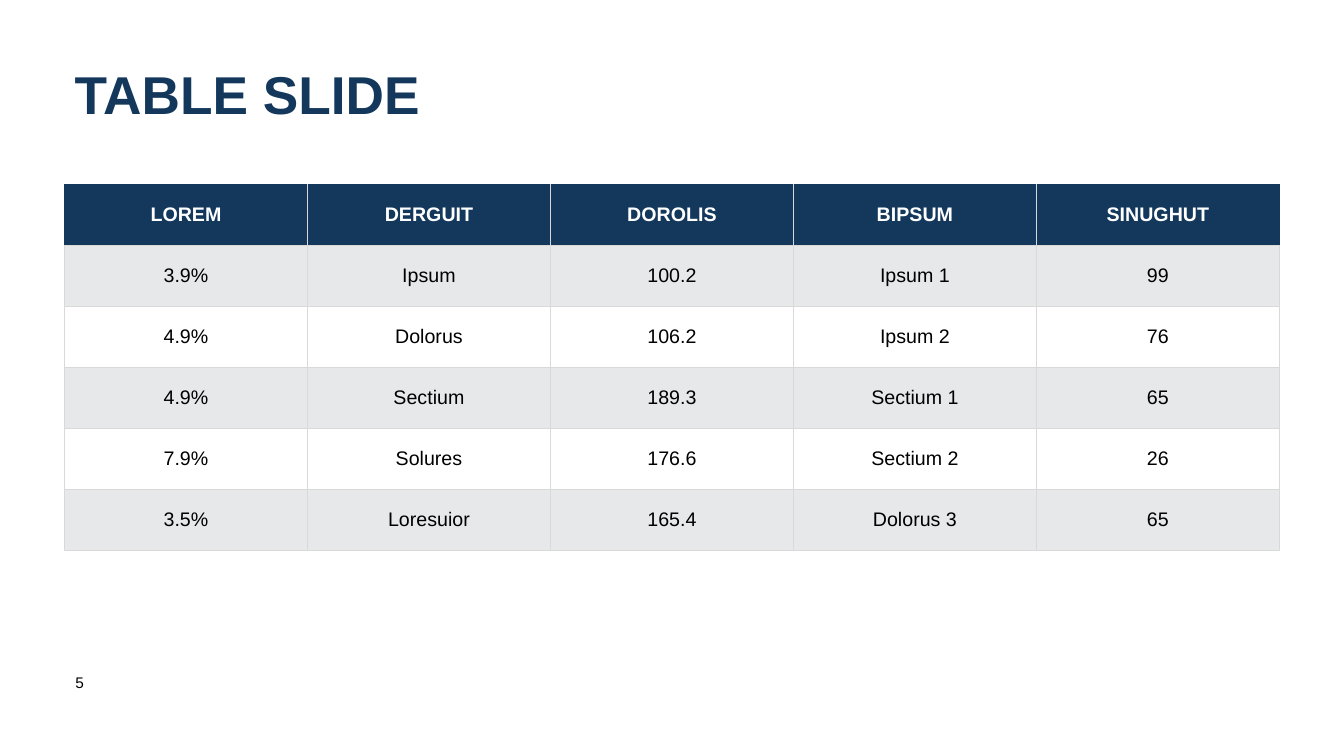
from pptx import Presentation
from pptx.dml.color import RGBColor
from pptx.enum.text import MSO_ANCHOR, MSO_AUTO_SIZE, PP_ALIGN
from pptx.oxml.ns import qn
from pptx.util import Inches, Pt
from lxml import etree

MIDDLE = MSO_ANCHOR.MIDDLE
NO_AUTOFIT = MSO_AUTO_SIZE.NONE
LEFT, CENTER = PP_ALIGN.LEFT, PP_ALIGN.CENTER

NAVY = RGBColor(0x13, 0x38, 0x5C)
BAND_GRAY = RGBColor(0xE7, 0xE8, 0xEA)
BORDER_GRAY = RGBColor(0xD9, 0xD9, 0xD9)
WHITE = RGBColor(0xFF, 0xFF, 0xFF)
BLACK = RGBColor(0x00, 0x00, 0x00)

FONT = "Arial"
TITLE_ONLY_LAYOUT = 5

TABLE_ROWS = [
    ("LOREM", "DERGUIT", "DOROLIS", "BIPSUM", "SINUGHUT"),
    ("3.9%", "Ipsum", "100.2", "Ipsum 1", "99"),
    ("4.9%", "Dolorus", "106.2", "Ipsum 2", "76"),
    ("4.9%", "Sectium", "189.3", "Sectium 1", "65"),
    ("7.9%", "Solures", "176.6", "Sectium 2", "26"),
    ("3.5%", "Loresuior", "165.4", "Dolorus 3", "65"),
]


def write_text(text_frame, text, size, color, bold=False, alignment=LEFT):
    paragraph = text_frame.paragraphs[0]
    paragraph.text = text
    paragraph.alignment = alignment
    font = paragraph.font
    font.name = FONT
    font.size = Pt(size)
    font.bold = bold
    font.color.rgb = color


def set_title(slide, text):
    title = slide.shapes.title
    title.left, title.top = Inches(0.64), Inches(0.5)
    title.width, title.height = Inches(11.86), Inches(0.84)
    title.text_frame.auto_size = NO_AUTOFIT
    title.text_frame.vertical_anchor = MIDDLE
    write_text(title.text_frame, text, 38, NAVY, bold=True)


def add_page_number(slide, number):
    box = slide.shapes.add_textbox(Inches(0.65), Inches(6.63), Inches(0.58), Inches(0.54))
    box.text_frame.word_wrap = True
    write_text(box.text_frame, number, 11, BLACK)


def set_borders(cell, colors):
    """Draw one-point borders, given colors for left, right, top and bottom."""
    properties = cell._tc.get_or_add_tcPr()
    for index, (side, color) in enumerate(zip("LRTB", colors)):
        line = etree.Element(qn(f"a:ln{side}"), w=str(Pt(1)))
        fill = etree.SubElement(line, qn("a:solidFill"))
        etree.SubElement(fill, qn("a:srgbClr"), val=str(color))
        properties.insert(index, line)


def format_cell(cell, text, is_header, fill_color, border_colors):
    cell.vertical_anchor = MIDDLE
    cell.margin_left = cell.margin_right = Inches(0.11)
    cell.margin_top = cell.margin_bottom = Inches(0.04)
    cell.fill.solid()
    cell.fill.fore_color.rgb = fill_color
    set_borders(cell, border_colors)
    write_text(cell.text_frame, text, 14, WHITE if is_header else BLACK, is_header, CENTER)


def add_data_table(slide, rows):
    last_column = len(rows[0]) - 1
    table = slide.shapes.add_table(
        len(rows), len(rows[0]), Inches(0.64), Inches(1.83), Inches(12.05), Inches(3.63)
    ).table
    for row_index, row in enumerate(rows):
        is_header = row_index == 0
        band_color = BAND_GRAY if row_index % 2 else WHITE
        for column_index, text in enumerate(row):
            left = NAVY if is_header and column_index == 0 else BORDER_GRAY
            right = NAVY if is_header and column_index == last_column else BORDER_GRAY
            top = NAVY if is_header else BORDER_GRAY
            format_cell(
                table.cell(row_index, column_index),
                text,
                is_header,
                NAVY if is_header else band_color,
                (left, right, top, BORDER_GRAY),
            )


def main():
    presentation = Presentation()
    presentation.slide_width = Inches(13.33)
    presentation.slide_height = Inches(7.5)
    slide = presentation.slides.add_slide(presentation.slide_layouts[TITLE_ONLY_LAYOUT])
    set_title(slide, "TABLE SLIDE")
    add_data_table(slide, TABLE_ROWS)
    add_page_number(slide, "5")
    presentation.save("out.pptx")


if __name__ == "__main__":
    main()
